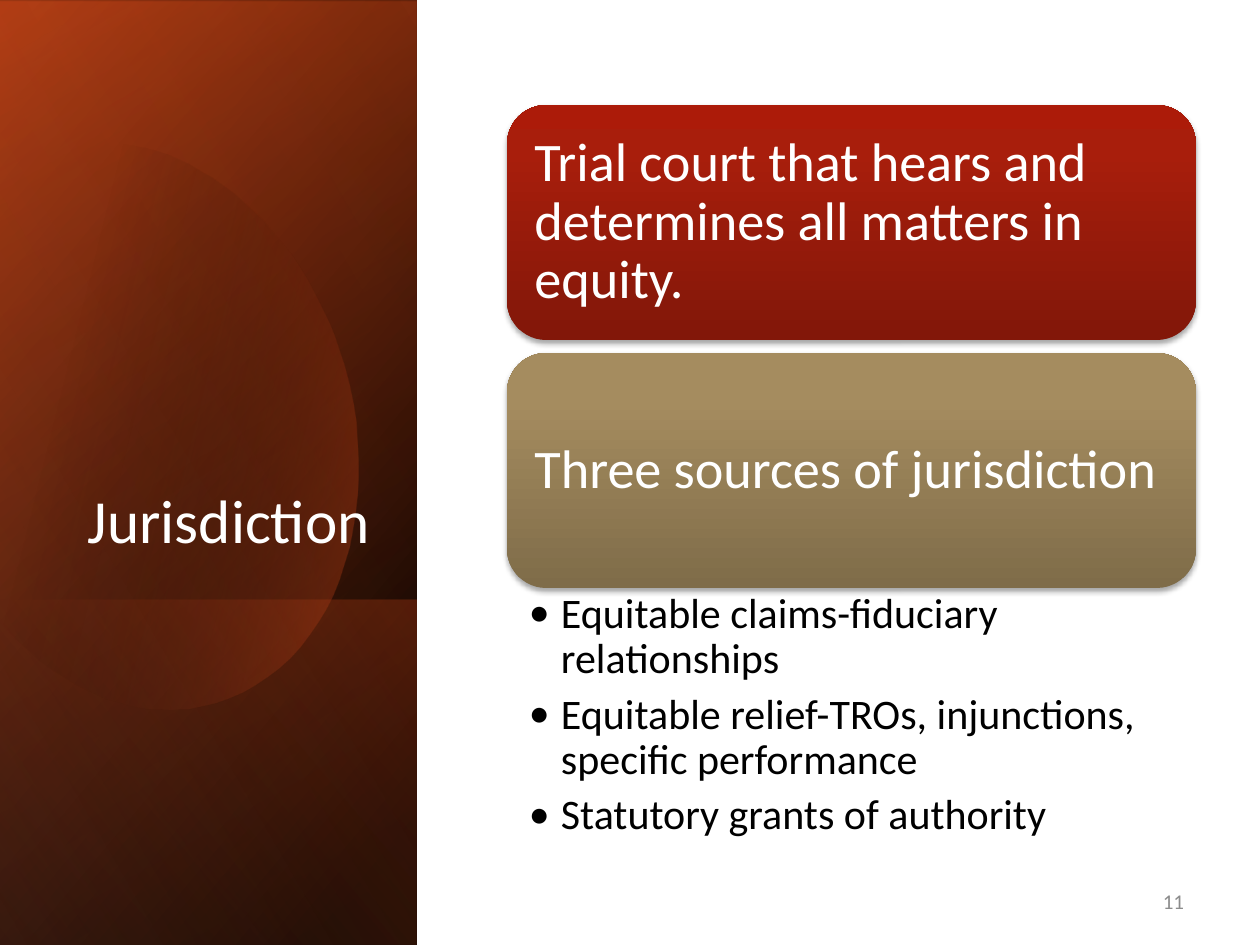
from lxml import etree
from pptx import Presentation
from pptx import util as u
from pptx.dml.color import RGBColor
from pptx.enum import shapes, text
from pptx.oxml.ns import qn

EMU_PER_PX = 914400 / 126


def px(length):
    """Turn px into EMU."""
    return u.Emu(round(length * EMU_PER_PX))


def rgb(code):
    """Turn a hex string into a colour."""
    return RGBColor.from_string(code)


def add_colour(parent, code, alpha=100):
    """Append a colour with an opacity in percent."""
    colour = etree.SubElement(parent, qn("a:srgbClr"), val=str(rgb(code)))
    if alpha < 100:
        etree.SubElement(colour, qn("a:alpha"), val=str(alpha * 1000))


def write(frame, lines, size=24, colour="000000", align="LEFT", anchor="TOP",
          insets=(13, 6, 13, 6), spacing=1, after=0, indent=0):
    """Fill a text frame with formatted paragraphs."""
    frame.word_wrap = True
    frame.vertical_anchor = getattr(text.MSO_ANCHOR, anchor)
    (frame.margin_left, frame.margin_top,
     frame.margin_right, frame.margin_bottom) = map(px, insets)
    for number, line in enumerate(lines):
        paragraph = frame.add_paragraph() if number else frame.paragraphs[0]
        paragraph.alignment = getattr(text.PP_ALIGN, align)
        paragraph.line_spacing = spacing
        paragraph.space_after = u.Pt(after)
        run = paragraph.add_run()
        run.text = line
        run.font.name, run.font.size = "Calibri", u.Pt(size)
        run.font.color.rgb = rgb(colour)
        if indent:
            properties = paragraph._p.get_or_add_pPr()
            properties.set("marL", str(px(indent)))
            properties.set("indent", str(-px(indent)))
            etree.SubElement(properties, qn("a:buFont"), typeface="Calibri")
            etree.SubElement(properties, qn("a:buChar"), char="•")


def curve(start, first, second, end, steps=24):
    """Return points along a cubic curve."""
    return [tuple(round((1 - t) ** 3 * a + 3 * (1 - t) ** 2 * t * b
                        + 3 * (1 - t) * t ** 2 * c + t ** 3 * d)
                  for a, b, c, d in zip(start, first, second, end))
            for t in (step / steps for step in range(1, steps + 1))]


class Deck:
    """Holds the style and the current slide."""

    def __init__(self):
        """Start a deck with one blank slide."""
        self.file = Presentation()
        self.file.slide_width, self.file.slide_height = px(1260), px(945)
        self.slide = self.file.slides.add_slide(self.file.slide_layouts[6])

    def shade(self, shape, stops, angle):
        """Give a shape a gradient and no outline."""
        properties = shape._element.spPr
        gradient = etree.SubElement(properties, qn("a:gradFill"), rotWithShape="1")
        stop_list = etree.SubElement(gradient, qn("a:gsLst"))
        for position, *colour in stops:
            stop = etree.SubElement(stop_list, qn("a:gs"), pos=str(position * 1000))
            add_colour(stop, *colour)
        etree.SubElement(gradient, qn("a:lin"), ang=str(angle * 60000), scaled="0")
        shape.line.fill.background()
        shape.shadow.inherit = False

    def panel(self, top, height, stops, angle, width=417):
        """Add a mirrored sidebar panel turned by a quarter."""
        left = (width - height) / 2
        panel = self.slide.shapes.add_shape(
            shapes.MSO_SHAPE.RECTANGLE, px(left), px(top - left), px(height), px(width))
        panel.rotation = 90
        panel._element.spPr.xfrm.set("flipH", "1")
        self.shade(panel, stops, angle)

    def outline(self, points, stops, angle):
        """Add a closed outline."""
        builder = self.slide.shapes.build_freeform(*points[0], scale=EMU_PER_PX)
        builder.add_line_segments(points[1:], close=True)
        self.shade(builder.convert_to_shape(), stops, angle)

    def card(self, top, topic, stops):
        """Add a rounded card with a soft shadow."""
        card = self.slide.shapes.add_shape(
            shapes.MSO_SHAPE.ROUNDED_RECTANGLE, px(507), px(top), px(689), px(235))
        self.shade(card, stops, 270)
        effects = card._element.spPr.find(qn("a:effectLst"))
        shadow = etree.SubElement(
            effects, qn("a:outerShdw"), blurRad=str(u.Pt(3.1)), dist=str(u.Pt(1.8)),
            dir="5400000", rotWithShape="0")
        add_colour(shadow, "000000", 35)
        write(card.text_frame, [topic], size=31, colour="FFFFFF", anchor="MIDDLE",
              insets=(16, 16, 16, 16), spacing=0.9)

    def label(self, left, top, width, height, lines, **style):
        """Add a text box."""
        box = self.slide.shapes.add_textbox(px(left), px(top), px(width), px(height))
        write(box.text_frame, lines, **style)


def main():
    """Build the slide and save it."""
    deck = Deck()
    deck.panel(0, 945, [(8, "000000"), (100, "9E3611")], 50)
    deck.panel(2, 945, [(0, "000000", 0), (99, "D34817", 46)], 30)
    deck.panel(600, 345, [(2, "D34817", 29), (100, "000000", 30)], 130)

    crest, right, foot, heel = (121, 144), (344, 365), (215, 702), (9, 630)
    edge, shoulder = (-19, 194), (57, 149)
    oval = [crest, *curve(crest, (215, 154), (307, 242), right),
            *curve(right, (387, 519), (330, 669), foot),
            *curve(foot, (144, 723), (67, 693), heel),
            (-4, 615), (-32, 209), edge,
            *curve(edge, (3, 173), (28, 158), shoulder),
            *curve(shoulder, (78, 142), (100, 141), crest)]
    deck.outline(oval, [(29, "000000", 0), (100, "D34817", 43)], 14)
    deck.panel(0, 945, [(0, "000000", 0), (99, "EF8C6A", 11)], 120)

    deck.label(60, 232, 323, 330, ["Jurisdiction"], size=35, colour="FFFFFF",
               align="RIGHT", anchor="BOTTOM")

    cards = [
        ("Trial court that hears and determines all matters in equity.",
         [(0, "821709"), (80, "A81E0C"), (100, "AC1B09")]),
        ("Three sources of jurisdiction",
         [(0, "7F6C49"), (80, "A58C5F"), (100, "A78D5E")]),
    ]
    for row, (topic, stops) in enumerate(cards):
        deck.card(105 + 248 * row, topic, stops)

    sources = ["Equitable claims-fiduciary relationships",
               "Equitable relief-TROs, injunctions, specific performance",
               "Statutory grants of authority"]
    deck.label(507, 587, 689, 266, sources, insets=(22, 5, 30, 5),
               spacing=0.9, after=5.8, indent=32)
    deck.label(903, 876, 294, 50, ["11"], size=12, colour="8C8C8C",
               align="RIGHT", anchor="MIDDLE")
    deck.file.save("out.pptx")


if __name__ == "__main__":
    main()
